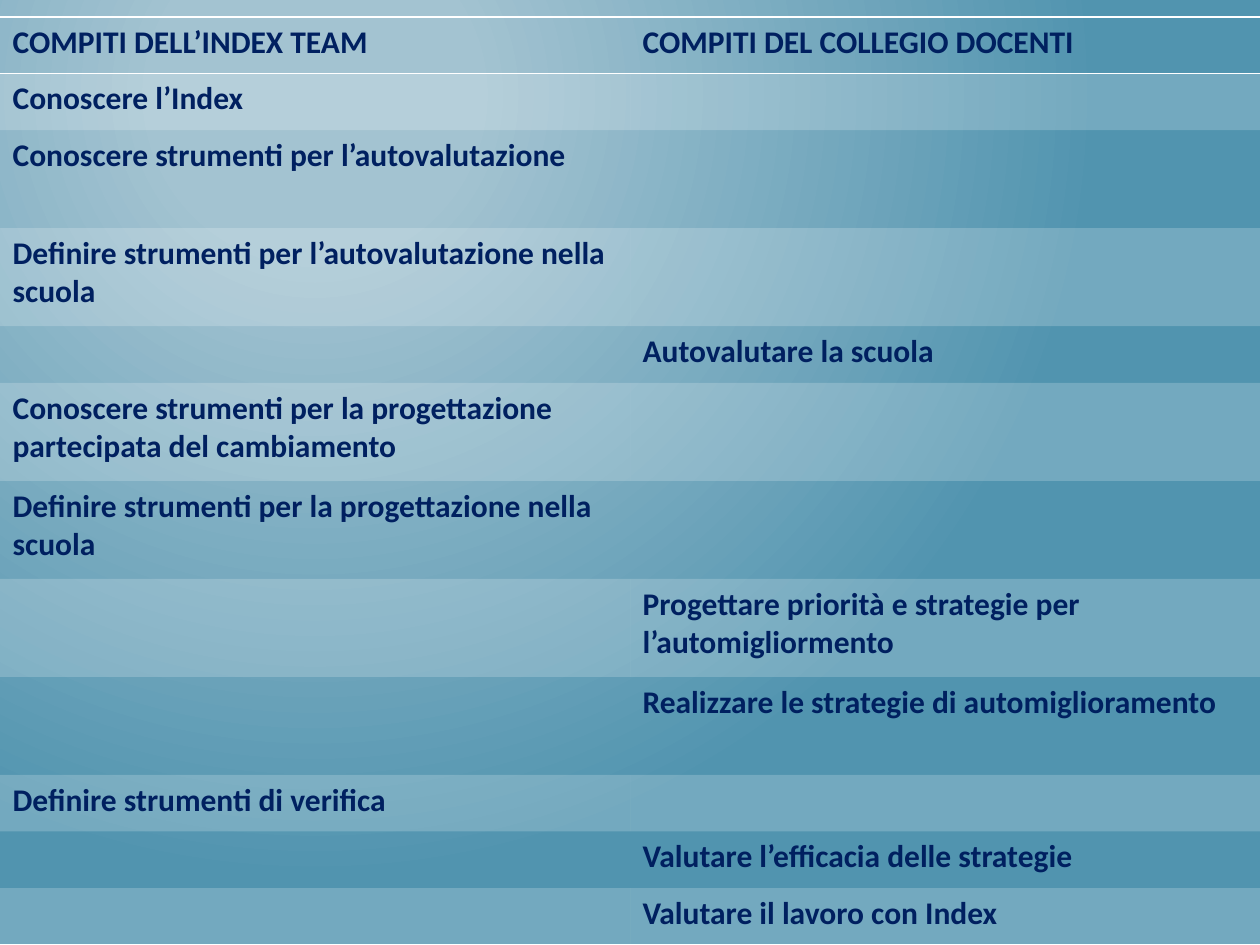
from lxml.etree import SubElement
from pptx import Presentation
from pptx.dml.color import RGBColor
from pptx.oxml import parse_xml
from pptx.oxml.ns import nsdecls, qn
from pptx.util import Pt

COLORS = {"text": "002060", "white": "FFFFFF", "glow": "A3C3D1", "sea": "5194AF"}
FONT = "Calibri"
NO_STYLE_NO_GRID = "{2D5ABB26-0587-4C30-8999-92F81FD0307C}"
SLIDE_WIDTH, SLIDE_HEIGHT = 720, 540
ONE_LINE, TWO_LINES = 32.4, 56

# (row height, index team task, teachers' board task)
TASKS = [
    (ONE_LINE, "COMPITI DELL’INDEX TEAM", "COMPITI DEL COLLEGIO DOCENTI"),
    (ONE_LINE, "Conoscere l’Index", ""),
    (TWO_LINES, "Conoscere strumenti per l’autovalutazione", ""),
    (TWO_LINES, "Definire strumenti per l’autovalutazione nella scuola", ""),
    (ONE_LINE, "", "Autovalutare la scuola"),
    (TWO_LINES, "Conoscere strumenti per la progettazione partecipata del cambiamento", ""),
    (TWO_LINES, "Definire strumenti per la progettazione nella scuola", ""),
    (TWO_LINES, "", "Progettare priorità e strategie per l’automigliormento"),
    (TWO_LINES, "", "Realizzare le strategie di automiglioramento"),
    (ONE_LINE, "Definire strumenti di verifica", ""),
    (ONE_LINE, "", "Valutare l’efficacia delle strategie"),
    (ONE_LINE, "", "Valutare il lavoro con Index"),
]


def paint_background(slide):
    slide.background.fill.solid()
    background = slide.background.fill._xPr
    background.replace(background.find(qn("a:solidFill")), parse_xml(
        f'<a:gradFill {nsdecls("a")} rotWithShape="1"><a:gsLst>'
        f'<a:gs pos="20000"><a:srgbClr val="{COLORS["glow"]}"/></a:gs>'
        f'<a:gs pos="100000"><a:srgbClr val="{COLORS["sea"]}"/></a:gs></a:gsLst>'
        '<a:path path="circle"><a:fillToRect l="50000" t="20000" r="100000" b="100000"/>'
        '</a:path></a:gradFill>'))


def fill_band(cell):
    """Fill the cell with white at 20 % opacity."""
    cell.fill.solid()
    cell.fill.fore_color.rgb = RGBColor.from_string(COLORS["white"])
    white = cell._tc.tcPr.find(qn("a:solidFill"))[0]
    SubElement(white, qn("a:alpha"), val="20000")


def draw_borders(cell, sides):
    properties = cell._tc.get_or_add_tcPr()
    for position, side in enumerate(sides):
        properties.insert(position, parse_xml(
            f'<a:{side} {nsdecls("a")} w="{Pt(1)}"><a:solidFill>'
            f'<a:srgbClr val="{COLORS["white"]}"/></a:solidFill></a:{side}>'))


def write_task(cell, task):
    run = cell.text_frame.paragraphs[0].add_run()
    run.text = task
    run.font.name, run.font.size, run.font.bold = FONT, Pt(18), True
    run.font.color.rgb = RGBColor.from_string(COLORS["text"])


def main():
    presentation = Presentation()
    presentation.slide_width = Pt(SLIDE_WIDTH)
    presentation.slide_height = Pt(SLIDE_HEIGHT)
    slide = presentation.slides.add_slide(presentation.slide_layouts[6])
    paint_background(slide)

    table_height = sum(height for height, *_ in TASKS)
    table = slide.shapes.add_table(
        len(TASKS), 2, Pt(0), Pt(SLIDE_HEIGHT - table_height),
        Pt(SLIDE_WIDTH), Pt(table_height)).table
    table._tbl.tblPr.find(qn("a:tableStyleId")).text = NO_STYLE_NO_GRID
    table.first_row = table.horz_banding = False

    borders = {0: ("lnT", "lnB"), len(TASKS) - 1: ("lnB",)}
    for row, (height, *tasks) in enumerate(TASKS):
        table.rows[row].height = Pt(height)
        for cell, task in zip(table.rows[row].cells, tasks):
            if task:
                write_task(cell, task)
            if row % 2:
                fill_band(cell)
            else:
                cell.fill.background()
            draw_borders(cell, borders.get(row, ()))

    presentation.save("out.pptx")


if __name__ == "__main__":
    main()
